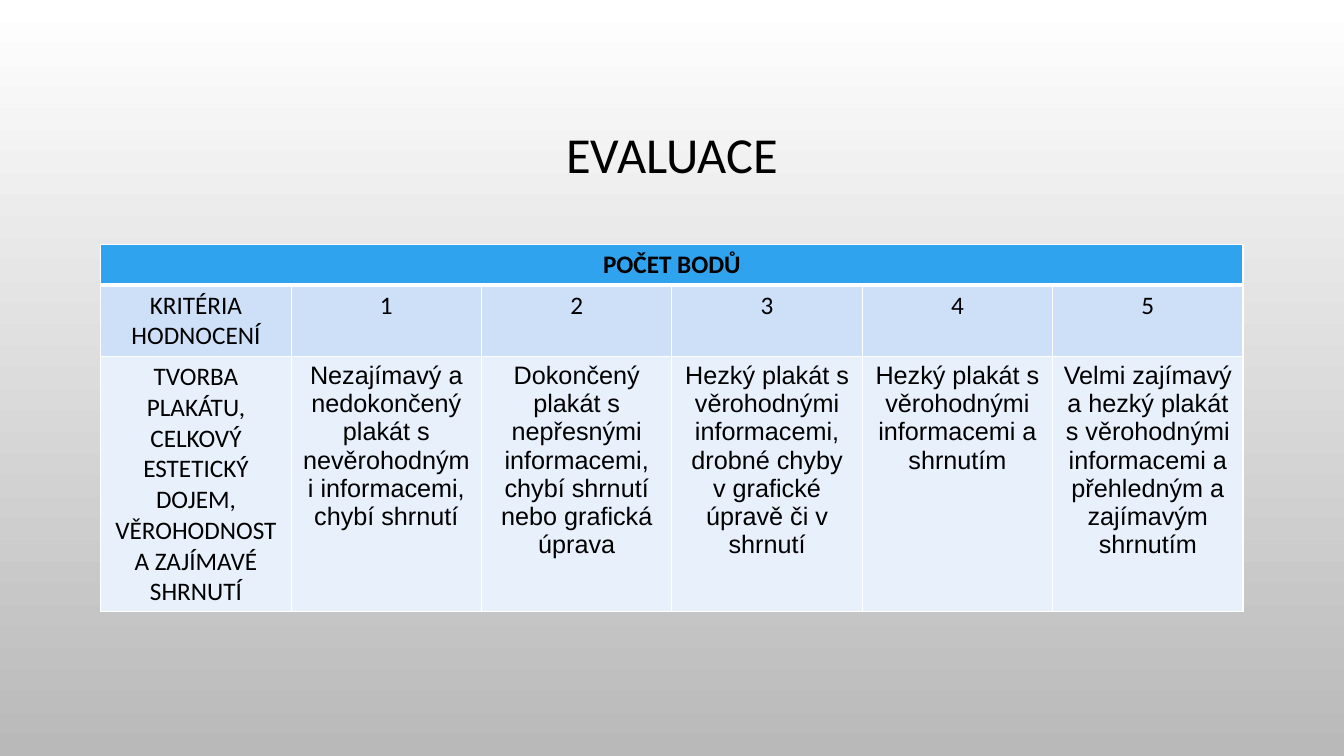
from lxml import etree
from pptx import Presentation
from pptx.dml.color import RGBColor
from pptx.enum import text as t
from pptx.oxml import ns
from pptx.util import Pt

BLACK = RGBColor(0x00, 0x00, 0x00)
WHITE = RGBColor(0xFF, 0xFF, 0xFF)
GREY = RGBColor(0xB9, 0xB9, 0xB9)
HEADER_BLUE = RGBColor(0x2F, 0xA3, 0xEE)
SCALE_BLUE = RGBColor(0xCD, 0xE0, 0xF8)
CRITERIA_BLUE = RGBColor(0xE8, 0xF0, 0xFC)

ROW_FILLS = [HEADER_BLUE, SCALE_BLUE, CRITERIA_BLUE]
ROW_HEIGHTS = [29.2, 51, 182]
RUBRIC = [
    ["POČET BODŮ", "", "", "", "", ""],
    ["KRITÉRIA HODNOCENÍ", "1", "2", "3", "4", "5"],
    [
        "TVORBA PLAKÁTU, CELKOVÝ ESTETICKÝ DOJEM, VĚROHODNOST A ZAJÍMAVÉ SHRNUTÍ",
        "Nezajímavý a nedokončený plakát s nevěrohodnými informacemi, chybí shrnutí",
        "Dokončený plakát s nepřesnými informacemi, chybí shrnutí nebo grafická úprava",
        "Hezký plakát s věrohodnými informacemi, drobné chyby v grafické úpravě či v shrnutí",
        "Hezký plakát s věrohodnými informacemi a shrnutím",
        "Velmi zajímavý a hezký plakát s věrohodnými informacemi a přehledným a zajímavým shrnutím",
    ],
]


def paint_background(slide):
    """Fill the slide with a gradient from white at the top to grey."""
    fill = slide.background.fill
    fill.gradient()
    fill.gradient_angle = 270
    for stop, color, position in zip(fill.gradient_stops, (WHITE, GREY), (0, 1)):
        stop.color.rgb = color
        stop.position = position


def write_centred(frame, wording, size, font="Calibri", bold=False):
    """Write one centred run into the first paragraph of a text frame."""
    paragraph = frame.paragraphs[0]
    paragraph.alignment = t.PP_ALIGN.CENTER
    run = paragraph.add_run()
    run.text = wording
    run.font.name = font
    run.font.size = Pt(size)
    run.font.bold = bold
    run.font.color.rgb = BLACK
    return paragraph


def add_title(slide, left, top, width, height):
    """Place the heading in the middle of its box."""
    heading = slide.shapes.add_textbox(Pt(left), Pt(top), Pt(width), Pt(height))
    frame = heading.text_frame
    frame.word_wrap = True
    frame.vertical_anchor = t.MSO_ANCHOR.MIDDLE
    write_centred(frame, "EVALUACE", 36).line_spacing = 0.9


def set_borders(cell, **widths):
    """Draw white cell borders, one point wide unless a side is given."""
    properties = cell._tc.get_or_add_tcPr()
    for side in "LRTB":
        line = etree.SubElement(
            properties, ns.qn(f"a:ln{side}"), w=str(Pt(widths.get(side, 1)))
        )
        paint = etree.SubElement(line, ns.qn("a:solidFill"))
        etree.SubElement(paint, ns.qn("a:srgbClr"), val=str(WHITE))


def add_rubric(slide, left, top, width):
    """Place the scoring table with equal columns and a merged header."""
    columns = len(RUBRIC[0])
    rubric = slide.shapes.add_table(
        len(RUBRIC), columns, Pt(left), Pt(top), Pt(width), Pt(sum(ROW_HEIGHTS))
    ).table
    for column in rubric.columns:
        column.width = Pt(width / columns)
    rubric.cell(0, 0).merge(rubric.cell(0, columns - 1))
    for r, wordings in enumerate(RUBRIC):
        rubric.rows[r].height = Pt(ROW_HEIGHTS[r])
        for c, wording in enumerate(wordings):
            cell = rubric.cell(r, c)
            set_borders(cell, T=3 if r == 1 else 1, B=3 if r == 0 else 1)
            cell.fill.solid()
            cell.fill.fore_color.rgb = ROW_FILLS[r]
            if wording:
                font = "Arial" if r == 2 and c > 0 else "Calibri"
                write_centred(cell.text_frame, wording, 18, font, bold=r == 0)


def main():
    """Build the evaluation slide and save it."""
    deck = Presentation()
    deck.slide_width, deck.slide_height = Pt(960), Pt(540)
    slide = deck.slides.add_slide(deck.slide_layouts[6])
    paint_background(slide)
    add_title(slide, 72, 49, 816, 126)
    add_rubric(slide, 72, 174.5, 816)
    deck.save("out.pptx")


if __name__ == "__main__":
    main()
